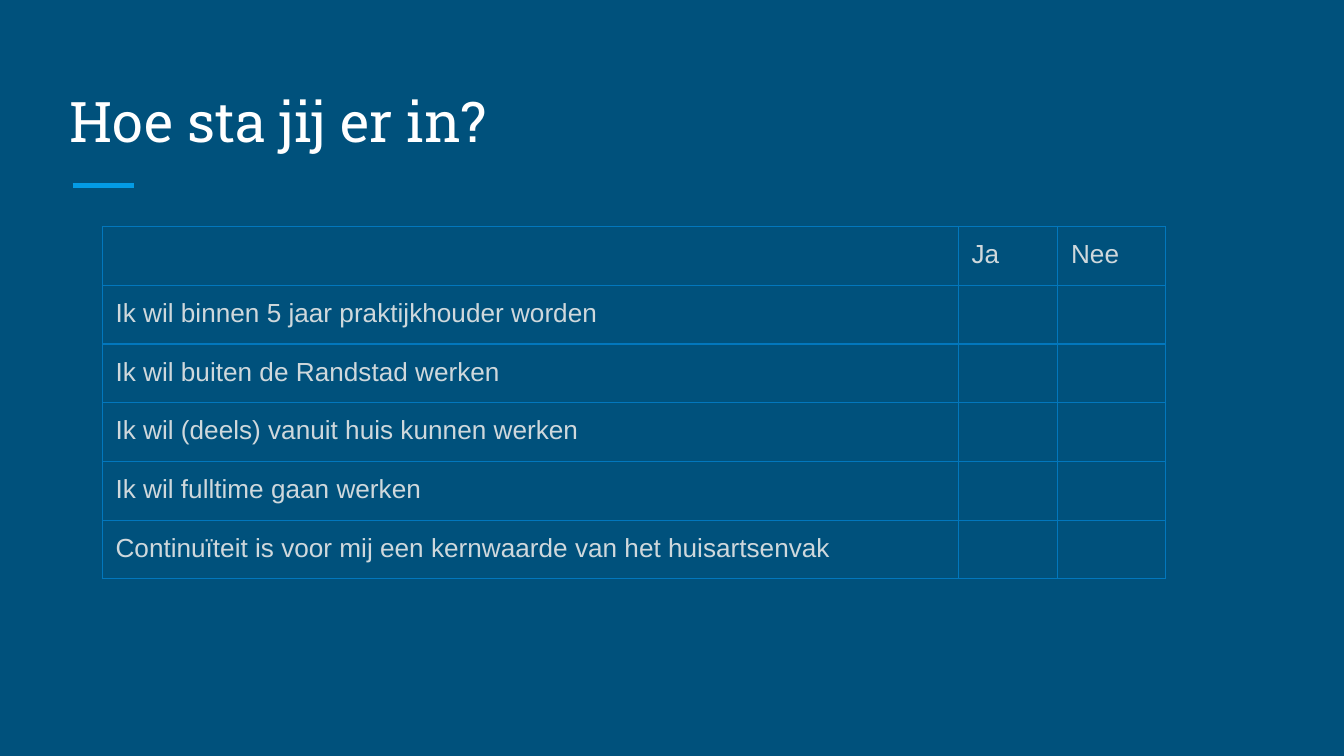
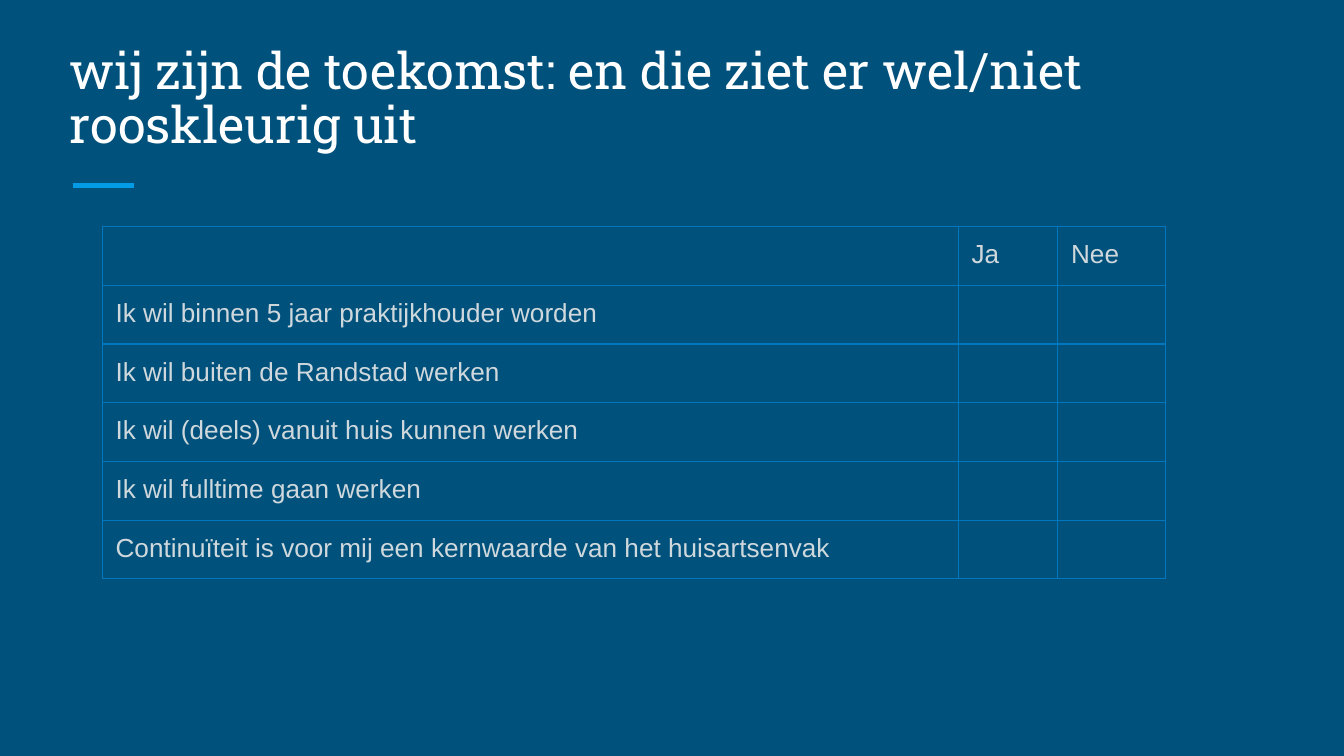
from dataclasses import dataclass

from lxml.etree import SubElement
from pptx import Presentation
from pptx.dml.color import RGBColor
from pptx.enum.shapes import MSO_CONNECTOR
from pptx.enum.text import MSO_ANCHOR
from pptx.oxml.ns import qn
from pptx.slide import Slide
from pptx.table import _Cell
from pptx.util import Emu, Pt

PX = 4572  # EMU per px, 200 px to the inch


@dataclass(frozen=True)
class Theme:
    background: str = "00517C"
    accent: str = "039BE5"
    grid: str = "0277BD"
    heading: str = "FFFFFF"
    body: str = "CFD8DC"
    heading_font: str = "Roboto Slab"
    body_font: str = "Arial"
    body_size: int = 14
    accent_width: float = 3
    grid_width: float = 0.75
    inset: int = 20


@dataclass(frozen=True)
class Box:
    left: int
    top: int
    width: int
    height: int

    def emu(self) -> tuple[Emu, Emu, Emu, Emu]:
        return px(self.left), px(self.top), px(self.width), px(self.height)


@dataclass(frozen=True)
class Survey:
    title: str
    title_size: int


def px(length: int) -> Emu:
    return Emu(length * PX)


THEME = Theme()
TITLE_BOX = Box(84, 100, 1830, 150)
ACCENT_LINE = Box(108, 276, 92, 0)
GRID_LEFT, GRID_TOP = 152, 337
COLUMN_WIDTHS = (1274, 148, 161)
ROW_HEIGHT = 84

ANSWERS = ("", "Ja", "Nee")
STATEMENTS = (
    "Ik wil binnen 5 jaar praktijkhouder worden",
    "Ik wil buiten de Randstad werken",
    "Ik wil (deels) vanuit huis kunnen werken",
    "Ik wil fulltime gaan werken",
    "Continuïteit is voor mij een kernwaarde van het huisartsenvak",
)
SURVEYS = (
    Survey("Hoe sta jij er in?", 30),
    Survey("wij zijn de toekomst: en die ziet er wel/niet rooskleurig uit", 27),
)


def add_run(paragraph, text: str, font: str, size: int, color: str) -> None:
    run = paragraph.add_run()
    run.text = text
    run.font.name = font
    run.font.size = Pt(size)
    run.font.color.rgb = RGBColor.from_string(color)


def set_insets(holder) -> None:
    """Give a text frame or a table cell the shared inner margins."""
    holder.margin_left = holder.margin_right = px(THEME.inset)
    holder.margin_top = holder.margin_bottom = px(THEME.inset)


# Shared backdrop: background colour and accent line
def add_backdrop(slide: Slide) -> None:
    fill = slide.background.fill
    fill.solid()
    fill.fore_color.rgb = RGBColor.from_string(THEME.background)
    left, top, width, height = ACCENT_LINE.emu()
    accent = slide.shapes.add_connector(
        MSO_CONNECTOR.STRAIGHT, left, top, left + width, top + height)
    accent.line.color.rgb = RGBColor.from_string(THEME.accent)
    accent.line.width = Pt(THEME.accent_width)
    SubElement(accent.line._get_or_add_ln().getparent(), qn("a:effectLst"))


def add_title(slide: Slide, survey: Survey) -> None:
    frame = slide.shapes.add_textbox(*TITLE_BOX.emu()).text_frame
    frame.word_wrap = True
    frame.vertical_anchor = MSO_ANCHOR.BOTTOM
    set_insets(frame)
    paragraph = frame.paragraphs[0]
    paragraph.line_spacing = 0.9
    add_run(paragraph, survey.title, THEME.heading_font, survey.title_size, THEME.heading)


# Answer grid: one row per statement, one column per answer
def add_borders(cell: _Cell) -> None:
    properties = cell._tc.get_or_add_tcPr()
    for side in ("lnL", "lnR", "lnT", "lnB"):
        border = SubElement(properties, qn(f"a:{side}"), w=str(Pt(THEME.grid_width)))
        solid = SubElement(border, qn("a:solidFill"))
        SubElement(solid, qn("a:srgbClr"), val=THEME.grid)


def fill_cell(cell: _Cell, text: str) -> None:
    set_insets(cell)
    add_borders(cell)
    cell.fill.background()
    paragraph = cell.text_frame.paragraphs[0]
    if text:
        add_run(paragraph, text, THEME.body_font, THEME.body_size, THEME.body)
    else:
        # An empty cell needs its own size, or it stretches the row
        SubElement(paragraph._p, qn("a:endParaRPr"), sz=str(THEME.body_size * 100))


def add_answer_grid(slide: Slide) -> None:
    rows = [ANSWERS] + [(statement, "", "") for statement in STATEMENTS]
    area = Box(GRID_LEFT, GRID_TOP, sum(COLUMN_WIDTHS), ROW_HEIGHT * len(rows))
    grid = slide.shapes.add_table(len(rows), len(ANSWERS), *area.emu()).table
    grid.first_row = grid.horz_banding = False
    for column, width in zip(grid.columns, COLUMN_WIDTHS):
        column.width = px(width)
    for row, texts in zip(grid.rows, rows):
        row.height = px(ROW_HEIGHT)
        for cell, text in zip(row.cells, texts):
            fill_cell(cell, text)


def main() -> None:
    deck = Presentation()
    deck.slide_width, deck.slide_height = px(2000), px(1125)
    blank = deck.slide_layouts[6]
    for survey in SURVEYS:
        slide = deck.slides.add_slide(blank)
        add_backdrop(slide)
        add_answer_grid(slide)
        add_title(slide, survey)
    deck.save("out.pptx")


if __name__ == "__main__":
    main()
